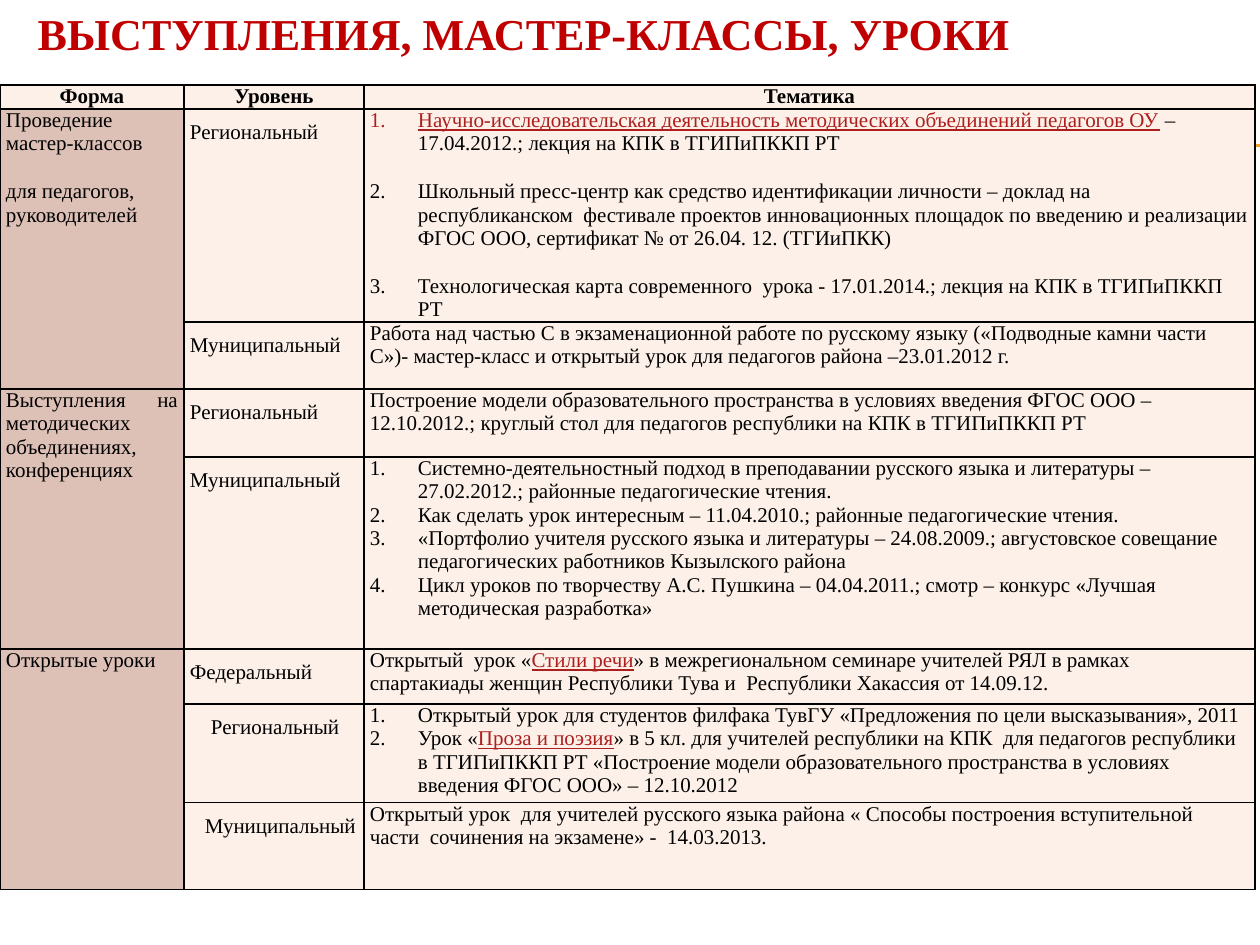
from lxml import etree
from pptx import Presentation
from pptx.dml.color import RGBColor
from pptx.enum.shapes import MSO_CONNECTOR
from pptx.enum.text import MSO_ANCHOR, PP_ALIGN
from pptx.oxml.ns import qn
from pptx.util import Pt

STRAIGHT = MSO_CONNECTOR.STRAIGHT
MIDDLE = MSO_ANCHOR.MIDDLE
LEFT, CENTER, JUSTIFY = PP_ALIGN.LEFT, PP_ALIGN.CENTER, PP_ALIGN.JUSTIFY
FONT = "Times New Roman"
COLORS = {
    "title": "C00000",
    "text": "000000",
    "link": "AD1F1F",
    "border": "000000",
    "form": "DDC0B6",
    "plain": "FCF0E8",
    "rule": "F0A22E",
}
COLUMN_WIDTHS = [184, 180, 891]
ROW_HEIGHTS = [24, 213, 67, 68, 192, 55, 99, 87]
HEADINGS = ["Форма", "Уровень", "Тематика"]
FORMS = [
    (1, 2, LEFT, ["Проведение мастер-классов", "для педагогов, руководителей"]),
    (3, 4, JUSTIFY, ["Выступления на методических объединениях, конференциях"]),
    (5, 7, LEFT, ["Открытые уроки"]),
]
TOPICS = [
    ("Региональный", 0, [
        "|Научно-исследовательская деятельность методических объединений педагогов ОУ|"
        " – 17.04.2012.; лекция на КПК в ТГИПиПККП РТ",
        "Школьный пресс-центр как средство идентификации личности – доклад на "
        "республиканском  фестивале проектов инновационных площадок по введению и "
        "реализации ФГОС ООО, сертификат № от 26.04. 12. (ТГИиПКК)",
        "Технологическая карта современного  урока - 17.01.2014.; лекция на КПК в "
        "ТГИПиПККП РТ",
    ], 14),
    ("Муниципальный", 0, [
        "Работа над частью С в экзаменационной работе по русскому языку («Подводные "
        "камни части С»)- мастер-класс и открытый урок для педагогов района –23.01.2012 г.",
    ], 0),
    ("Региональный", 0, [
        "Построение модели образовательного пространства в условиях введения ФГОС ООО – "
        "12.10.2012.; круглый стол для педагогов республики на КПК в ТГИПиПККП РТ",
    ], 0),
    ("Муниципальный", 0, [
        "Системно-деятельностный подход в преподавании русского языка и литературы – "
        "27.02.2012.; районные педагогические чтения.",
        "Как сделать урок интересным – 11.04.2010.; районные педагогические чтения.",
        "«Портфолио учителя русского языка и литературы – 24.08.2009.; августовское "
        "совещание педагогических работников Кызылского района",
        "Цикл уроков по творчеству А.С. Пушкина – 04.04.2011.; смотр – конкурс «Лучшая "
        "методическая разработка»",
    ], 0),
    ("Федеральный", 0, [
        "Открытый  урок «|Стили речи|» в межрегиональном семинаре учителей РЯЛ в рамках "
        "спартакиады женщин Республики Тува и  Республики Хакассия от 14.09.12.",
    ], 0),
    ("Региональный", 21, [
        "Открытый урок для студентов филфака ТувГУ «Предложения по цели высказывания», 2011",
        "Урок «|Проза и поэзия|» в 5 кл. для учителей республики на КПК  для педагогов "
        "республики в ТГИПиПККП РТ «Построение модели образовательного пространства в "
        "условиях введения ФГОС ООО» – 12.10.2012",
    ], 0),
    ("Муниципальный", 15, [
        "Открытый урок  для учителей русского языка района « Способы построения "
        "вступительной части  сочинения на экзамене» -  14.03.2013.",
    ], 0),
]


def px(length):
    return round(length * 914400 / 126)


def color(name):
    return RGBColor.from_string(COLORS[name])


class SlideBuilder:
    def __init__(self, deck):
        self.page = deck.slides.add_slide(deck.slide_layouts[5])

    def style(self, span, size, name, bold=False):
        span.font.name = FONT
        span.font.size = Pt(size)
        span.font.bold = bold
        span.font.color.rgb = color(name)

    def title(self, text, left, top, width, height):
        box = self.page.shapes.title
        box.left, box.top, box.width, box.height = map(px, (left, top, width, height))
        frame = box.text_frame
        frame.text = text
        frame.vertical_anchor = MIDDLE
        frame.word_wrap = True
        para = frame.paragraphs[0]
        para.alignment = LEFT
        self.style(para.runs[0], 25.2, "title", True)

    def rule(self, left, right, top):
        line = self.page.shapes.add_connector(
            STRAIGHT, px(left), px(top), px(right), px(top))
        line.line.color.rgb = color("rule")
        line.line.width = Pt(0.75)
        etree.SubElement(line._element.spPr, qn("a:effectLst"))

    def table(self, left, top, widths, heights):
        frame = self.page.shapes.add_table(
            len(heights), len(widths), px(left), px(top), px(sum(widths)), px(sum(heights)))
        table = frame.table
        table.first_row = table.horz_banding = False
        for column, width in zip(table.columns, widths):
            column.width = px(width)
        for row_index, height in enumerate(heights):
            row = table.rows[row_index]
            row.height = px(height)
            for column_index, cell in enumerate(row.cells):
                is_form = row_index > 0 and column_index == 0
                self.dress(cell, "form" if is_form else "plain")
        return table

    def dress(self, cell, fill):
        cell.margin_left = cell.margin_right = px(6)
        cell.margin_top = cell.margin_bottom = 0
        cell.fill.solid()
        cell.fill.fore_color.rgb = color(fill)
        properties = cell._tc.get_or_add_tcPr()
        for position, side in enumerate(("lnL", "lnR", "lnT", "lnB")):
            border = etree.Element(qn(f"a:{side}"), w=str(Pt(1)))
            solid = etree.SubElement(border, qn("a:solidFill"))
            etree.SubElement(solid, qn("a:srgbClr"), val=COLORS["border"])
            properties.insert(position, border)

    def cell_text(self, cell, lines, align=LEFT, bold=False, gap=0, spacing=1.0,
                  indent=0, numbered=False):
        frame = cell.text_frame
        for index, line in enumerate(lines):
            para = frame.paragraphs[0] if index == 0 else frame.add_paragraph()
            para.alignment = align
            para.line_spacing = spacing
            para.space_before = Pt(gap if index else 0)
            properties = para._p.get_or_add_pPr()
            properties.set("marL", str(px(48 if numbered else indent)))
            if numbered:
                properties.set("indent", str(-px(48)))
                etree.SubElement(properties, qn("a:buAutoNum"), type="arabicPeriod")
            for part, text in enumerate(line.split("|")):
                if text:
                    span = para.add_run()
                    span.text = text
                    linked = part % 2 == 1
                    self.style(span, 12, "link" if linked else "text", bold)
                    span.font.underline = linked


def main():
    deck = Presentation()
    deck.slide_width, deck.slide_height = px(1260), px(945)
    builder = SlideBuilder(deck)
    for top in (145, 146):
        builder.rule(71, 1260, top)
    builder.title("ВЫСТУПЛЕНИЯ, МАСТЕР-КЛАССЫ, УРОКИ", 25, 0, 1215, 66)
    table = builder.table(0, 85, COLUMN_WIDTHS, ROW_HEIGHTS)
    for column, heading in enumerate(HEADINGS):
        builder.cell_text(table.cell(0, column), [heading], CENTER, bold=True)
    for first, last, align, lines in FORMS:
        table.cell(first, 0).merge(table.cell(last, 0))
        builder.cell_text(table.cell(first, 0), lines, align, gap=14)
    for row, (level, indent, lines, gap) in enumerate(TOPICS, 1):
        builder.cell_text(table.cell(row, 1), [level], spacing=1.5, indent=indent)
        builder.cell_text(table.cell(row, 2), lines, gap=gap, numbered=len(lines) > 1)
    deck.save("out.pptx")


if __name__ == "__main__":
    main()
